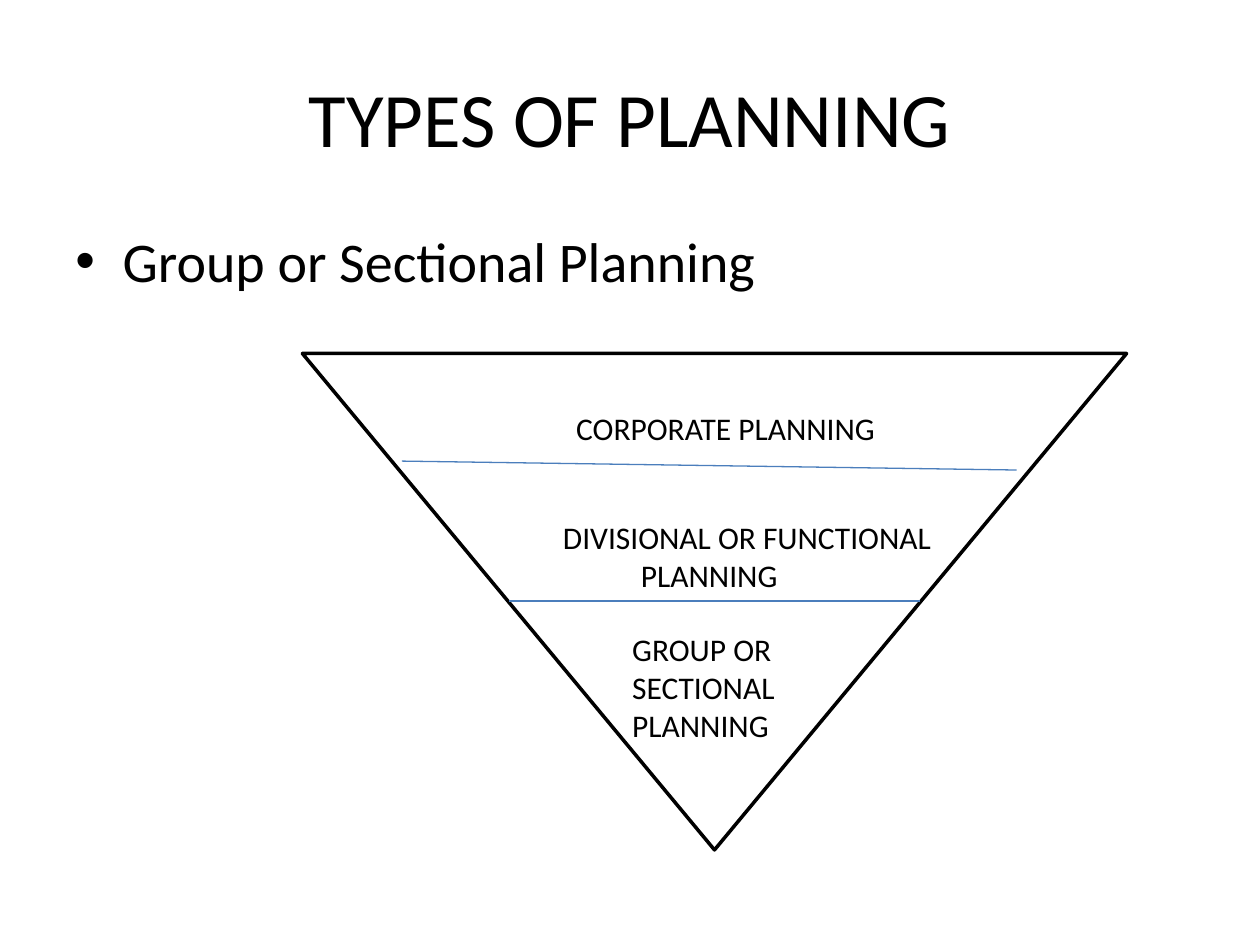
from pptx import Presentation
from pptx.dml.color import RGBColor
from pptx.enum.shapes import MSO_CONNECTOR as Connector, MSO_SHAPE as Shape
from pptx.enum.text import MSO_ANCHOR as Anchor, PP_ALIGN as Align
from pptx.oxml.ns import qn
from pptx.util import Pt
from lxml import etree


def color(value):
    return RGBColor.from_string(value)


def write(text_frame, lines, size, indents):
    text_frame.word_wrap = True
    text_frame.text = "\n".join(lines)
    for paragraph, indent in zip(text_frame.paragraphs, indents):
        if indent:
            paragraph._p.get_or_add_pPr().set("marL", str(Pt(indent)))
        font = paragraph.runs[0].font
        font.name, font.size = "Calibri", Pt(size)
        font.color.rgb = color("000000")


presentation = Presentation()
presentation.slide_width, presentation.slide_height = Pt(720), Pt(540)
slide = presentation.slides.add_slide(presentation.slide_layouts[5])
shapes = slide.shapes

# Title
title = shapes.title
title.left, title.top, title.width, title.height = Pt(36), Pt(21.6), Pt(648), Pt(90)
write(title.text_frame, ["TYPES OF PLANNING"], 44, [0])
title.text_frame.vertical_anchor = Anchor.MIDDLE
title.text_frame.paragraphs[0].alignment = Align.CENTER

# Bulleted topic
topic = shapes.add_textbox(Pt(36), Pt(126), Pt(648), Pt(356.4))
write(topic.text_frame, ["Group or Sectional Planning"], 32, [27])
paragraph = topic.text_frame.paragraphs[0]
paragraph.space_before = Pt(6.4)
properties = paragraph._p.get_or_add_pPr()
properties.set("indent", str(-Pt(27)))
etree.SubElement(properties, qn("a:buFont")).set("typeface", "Arial")
etree.SubElement(properties, qn("a:buChar")).set("char", "•")

# Inverted planning triangle
triangle = shapes.add_shape(Shape.FLOWCHART_MERGE, Pt(172.8), Pt(202), Pt(471), Pt(283.7))
triangle.shadow.inherit = False
triangle.fill.solid()
triangle.fill.fore_color.rgb = color("FFFFFF")
triangle.line.color.rgb = color("000000")
triangle.line.width = Pt(2)

# Dividers between the levels
for x1, y1, x2, y2 in [(229.7, 263.5, 581, 268.6), (290.9, 343.4, 525.6, 343.4)]:
    divider = shapes.add_connector(Connector.STRAIGHT, Pt(x1), Pt(y1), Pt(x2), Pt(y2))
    divider.line.color.rgb = color("4B7EBC")
    divider.line.width = Pt(0.75)
    etree.SubElement(divider._element.spPr, qn("a:effectLst"))

# Level labels: box, lines and the left indent of each line
levels = [
    ((229.7, 230.4, 284, 28.8), ["CORPORATE PLANNING"], [92.5]),
    ((314.6, 292.3, 231.1, 51.1), ["DIVISIONAL OR FUNCTIONAL", "PLANNING"], [0, 44.6]),
    ((354.2, 356.4, 130.3, 72.7), ["GROUP OR SECTIONAL PLANNING"], [0]),
]
for box, lines, indents in levels:
    label = shapes.add_textbox(*map(Pt, box))
    write(label.text_frame, lines, 18, indents)

presentation.save("out.pptx")
